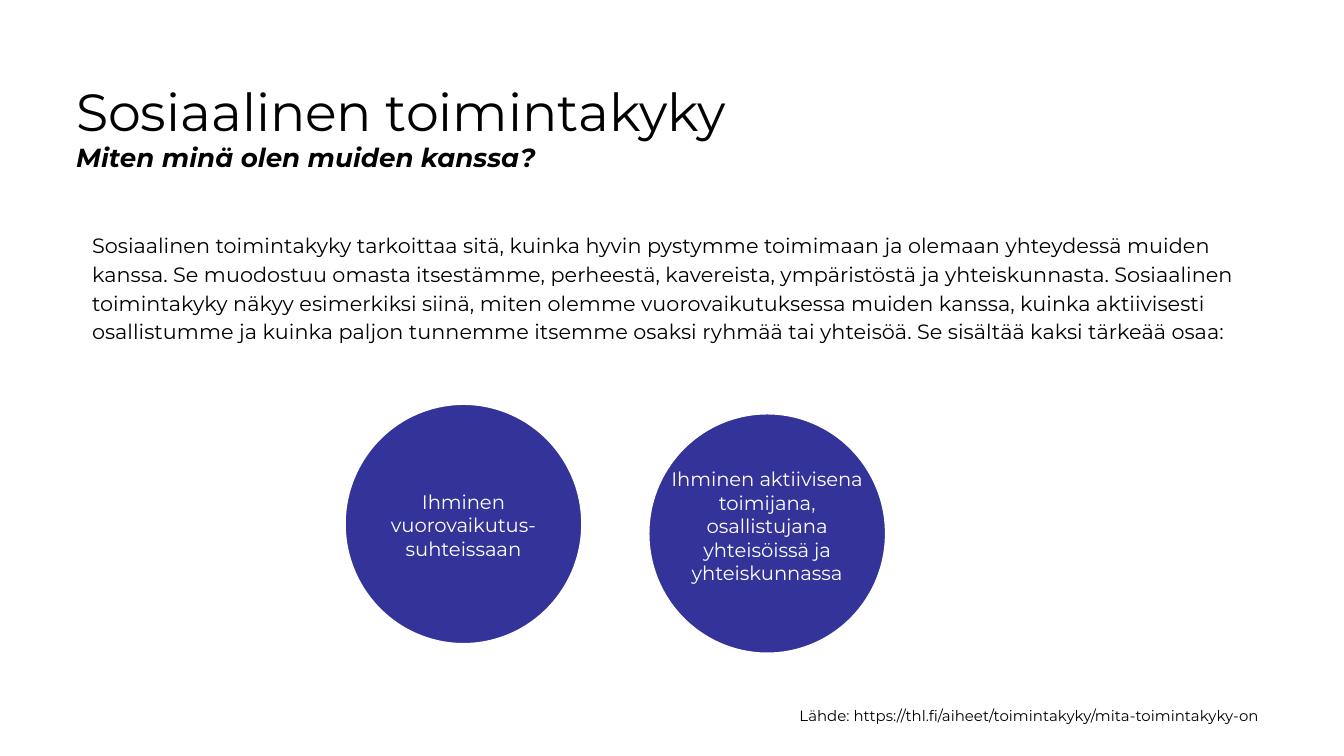
from pptx import Presentation
from pptx.dml.color import RGBColor
from pptx.enum.shapes import MSO_SHAPE as Shape
from pptx.enum.text import MSO_ANCHOR as Anchor, PP_ALIGN as Align
from pptx.util import Cm, Pt

FONT = "Montserrat"
BLACK, WHITE, BLUE = "000000", "FFFFFF", "333399"
WIDE, HIGH = 25.4, 14.29
EDGE, SPAN = 1.19, 23.01

TITLE = "Sosiaalinen toimintakyky"
SUB = "Miten minä olen muiden kanssa?"
BODY = (
    "Sosiaalinen toimintakyky tarkoittaa sitä, kuinka hyvin pystymme toimimaan "
    "ja olemaan yhteydessä muiden kanssa. Se muodostuu omasta itsestämme, "
    "perheestä, kavereista, ympäristöstä ja yhteiskunnasta. Sosiaalinen "
    "toimintakyky näkyy esimerkiksi siinä, miten olemme vuorovaikutuksessa "
    "muiden kanssa, kuinka aktiivisesti osallistumme ja kuinka paljon tunnemme "
    "itsemme osaksi ryhmää tai yhteisöä. Se sisältää kaksi tärkeää osaa:"
)
SOURCE = "Lähde: https://thl.fi/aiheet/toimintakyky/mita-toimintakyky-on"
PARTS = [
    ((6.5, 7.62, 4.52, 4.57), 0.69, ["Ihminen", "vuorovaikutus-suhteissaan"]),
    ((12.24, 7.8, 4.52, 4.57), 0.53,
     ["Ihminen aktiivisena toimijana, osallistujana yhteisöissä ja yhteiskunnassa"]),
]


def color(code):
    """Turn a hex string into a colour."""
    return RGBColor.from_string(code)


def write(para, text, size=10.5, ink=BLACK, bold=False, italic=False):
    """Add a formatted run to a paragraph."""
    run = para.add_run()
    run.text = text
    font = run.font
    font.name, font.size = FONT, Pt(size)
    font.bold, font.italic = bold, italic
    font.color.rgb = color(ink)


def frame(shapes, box, pad=0.25, wrap=True, anchor=Anchor.TOP):
    """Add a text box and return its text frame."""
    area = shapes.add_textbox(*map(Cm, box)).text_frame
    area.word_wrap, area.vertical_anchor = wrap, anchor
    area.margin_left = area.margin_right = Cm(pad)
    area.margin_top = area.margin_bottom = Cm(pad)
    return area


def head(slide, box):
    """Place the title with its question below."""
    para = frame(slide.shapes, box).paragraphs[0]
    write(para, TITLE, size=28)
    para.add_line_break()
    write(para, SUB, size=14, bold=True, italic=True)


def body(slide, box):
    """Place the main paragraph, indented from the title."""
    left, top, width, height = box
    indent = 0.3
    area = frame(slide.shapes, (left + indent, top, width - indent, height))
    para = area.paragraphs[0]
    para.line_spacing = 1.15
    write(para, BODY, size=11.1)


def circle(slide, box, drop, lines):
    """Place a disc and its label as one group."""
    left, top, width, height = box
    shapes = slide.shapes.add_group_shape().shapes
    disc = shapes.add_shape(Shape.OVAL, *map(Cm, box))
    disc.shadow.inherit = False
    disc.fill.solid()
    disc.fill.fore_color.rgb = color(BLUE)
    disc.line.color.rgb = color(WHITE)
    disc.line.width = Pt(2)
    inset = 0.15
    label = (left + inset, top + drop, width - 2 * inset, 3.23)
    area = frame(shapes, label, pad=0.03, anchor=Anchor.MIDDLE)
    for i, line in enumerate(lines):
        para = area.add_paragraph() if i else area.paragraphs[0]
        para.alignment = Align.CENTER
        write(para, line, ink=WHITE)


def source(slide, box):
    """Place the source line."""
    area = frame(slide.shapes, box, wrap=False)
    write(area.paragraphs[0], SOURCE, size=8)


def main():
    """Build and save the slide."""
    deck = Presentation()
    deck.slide_width, deck.slide_height = Cm(WIDE), Cm(HIGH)
    slide = deck.slides.add_slide(deck.slide_layouts[6])
    head(slide, (EDGE, 1.24, SPAN, 1.6))
    body(slide, (EDGE, 4.09, SPAN, 2.9))
    for box, drop, lines in PARTS:
        circle(slide, box, drop, lines)
    source(slide, (14.86, 13.18, 9.35, 0.94))
    deck.save("out.pptx")


if __name__ == "__main__":
    main()
